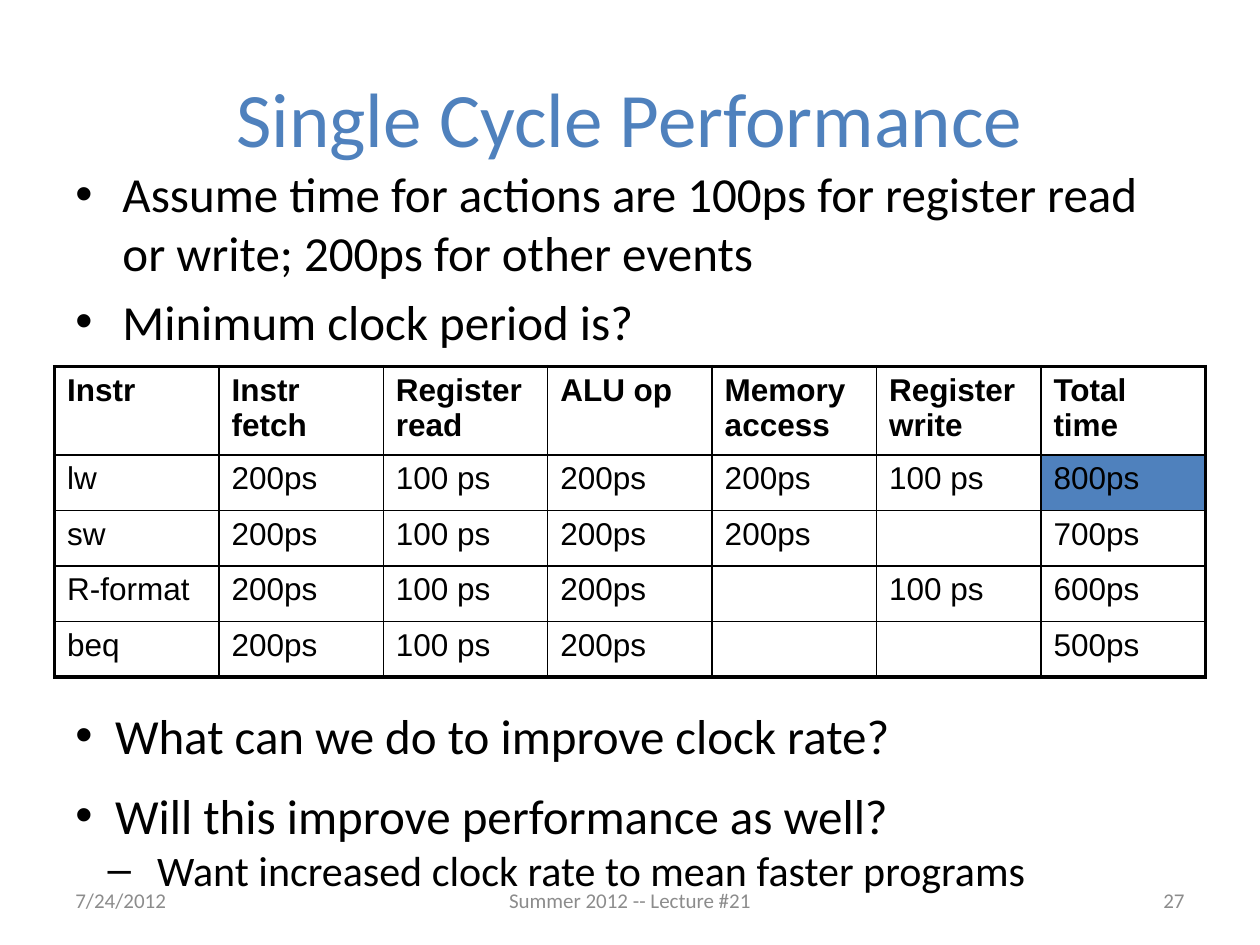
from dataclasses import dataclass

from lxml import etree
from pptx import Presentation
from pptx.dml.color import RGBColor
from pptx.enum import text as t
from pptx.oxml import ns
from pptx.util import Cm, Pt

BLACK, BLUE, GREY = "000000", "4F81BD", "8C8C8C"
LEFT, MID, RIGHT = t.PP_ALIGN.LEFT, t.PP_ALIGN.CENTER, t.PP_ALIGN.RIGHT


@dataclass
class Para:
    text: str
    size: float
    color: str = BLACK
    align: t.PP_ALIGN = LEFT
    mark: str = ""
    margin: float = 0
    hang: float = 0
    before: float = 0


@dataclass
class Box:
    x: float
    y: float
    w: float
    h: float
    paras: list[Para]
    anchor: t.MSO_ANCHOR = t.MSO_ANCHOR.MIDDLE


def paint(target, color: str) -> None:
    """Colour a font or a fill."""
    if hasattr(target, "solid"):
        target.solid()
        target.fore_color.rgb = RGBColor.from_string(color)
    else:
        target.color.rgb = RGBColor.from_string(color)


def add_run(para, words: str, size: float, face: str, color: str, bold: bool = False) -> None:
    run = para.add_run()
    run.text = words
    font = run.font
    font.name, font.size, font.bold = face, Pt(size), bold
    paint(font, color)


def add_mark(para, item: Para) -> None:
    """Give a paragraph its bullet and hanging indent."""
    props = para._p.get_or_add_pPr()
    props.set("marL", str(Cm(item.margin)))
    props.set("indent", str(-Cm(item.hang)))
    etree.SubElement(props, ns.qn("a:buFont")).set("typeface", "Arial")
    etree.SubElement(props, ns.qn("a:buChar")).set("char", item.mark)


def add_box(slide, box: Box) -> None:
    shape = slide.shapes.add_textbox(Cm(box.x), Cm(box.y), Cm(box.w), Cm(box.h))
    frame = shape.text_frame
    frame.word_wrap = True
    frame.vertical_anchor = box.anchor
    for i, item in enumerate(box.paras):
        para = frame.add_paragraph() if i else frame.paragraphs[0]
        para.alignment = item.align
        para.space_before = Pt(item.before)
        if item.mark:
            add_mark(para, item)
        add_run(para, item.text, item.size, "Calibri", item.color)


def add_edge(cell, side: str, width: float) -> None:
    props = cell._tc.get_or_add_tcPr()
    line = etree.SubElement(props, ns.qn(f"a:ln{side}"), w=str(Pt(width)))
    fill = etree.SubElement(line, ns.qn("a:solidFill"))
    etree.SubElement(fill, ns.qn("a:srgbClr")).set("val", BLACK)


def add_grid(slide, rows: list[list[str]]) -> None:
    """Draw the timing table with a heavy frame and a rule under its head."""
    high, wide = len(rows), len(rows[0])
    heights = [1.69] + [1.12] * (high - 1)
    frame = slide.shapes.add_table(high, wide, Cm(1.1), Cm(7.39), Cm(23.2), Cm(sum(heights)))
    table = frame.table
    table.first_row = table.horz_banding = False
    for col in table.columns:
        col.width = Cm(23.2 / wide)
    for r, row in enumerate(rows):
        table.rows[r].height = Cm(heights[r])
        for c, words in enumerate(row):
            cell = table.cell(r, c)
            add_edge(cell, "L", 2.25 if c == 0 else 1)
            add_edge(cell, "R", 2.25 if c == wide - 1 else 1)
            add_edge(cell, "T", {0: 2.25, 1: 1.5}.get(r, 1))
            add_edge(cell, "B", {0: 1.5, high - 1: 2.25}.get(r, 1))
            if words == "800ps":
                paint(cell.fill, BLUE)
            else:
                cell.fill.background()
            if words:
                add_run(cell.text_frame.paragraphs[0], words, 18, "Arial", BLACK, r == 0)


TOP = t.MSO_ANCHOR.TOP
INTRO = dict(size=28, mark="•", margin=0.95, hang=0.95, before=5.6)
ASK = dict(size=28, mark="•", margin=0.8, hang=0.8)

BOXES = [
    Box(1.27, 0.76, 22.86, 3.18, [Para("Single Cycle Performance", 44, BLUE, MID)]),
    Box(1.27, 3.18, 22.86, 4.95, [
        Para("Assume time for actions are 100ps for register read or write; "
             "200ps for other events", **INTRO),
        Para("Minimum clock period is?", **INTRO),
    ], TOP),
    Box(1.27, 14.1, 22.86, 4.06, [
        Para("What can we do to improve clock rate?", **ASK),
        Para("Will this improve performance as well?", before=12, **ASK),
        Para("Want increased clock rate to mean faster programs", 24,
             mark="–", margin=1.65, hang=1),
    ], TOP),
    Box(1.27, 17.65, 5.93, 1.01, [Para("7/24/2012", 12, GREY)]),
    Box(18.2, 17.65, 5.93, 1.01, [Para("27", 12, GREY, RIGHT)]),
    Box(8.68, 17.65, 8.04, 1.01, [Para("Summer 2012 -- Lecture #21", 12, GREY, MID)]),
]

ROWS = [
    ["Instr", "Instr fetch", "Register read", "ALU op", "Memory access",
     "Register write", "Total time"],
    ["lw", "200ps", "100 ps", "200ps", "200ps", "100 ps", "800ps"],
    ["sw", "200ps", "100 ps", "200ps", "200ps", "", "700ps"],
    ["R-format", "200ps", "100 ps", "200ps", "", "100 ps", "600ps"],
    ["beq", "200ps", "100 ps", "200ps", "", "", "500ps"],
]


def main() -> None:
    deck = Presentation()
    deck.slide_width, deck.slide_height = Cm(25.4), Cm(19.05)
    slide = deck.slides.add_slide(deck.slide_layouts[6])
    for box in BOXES:
        add_box(slide, box)
    add_grid(slide, ROWS)
    deck.save("out.pptx")


if __name__ == "__main__":
    main()
